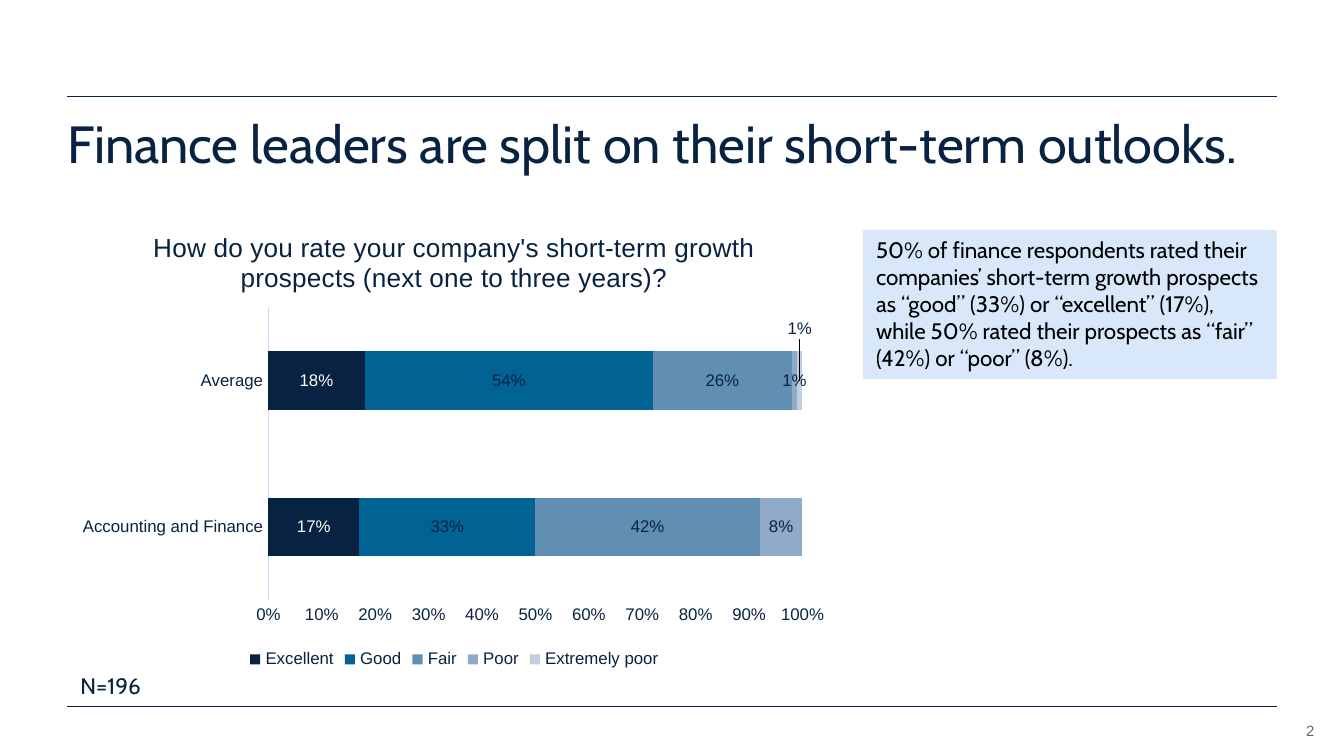
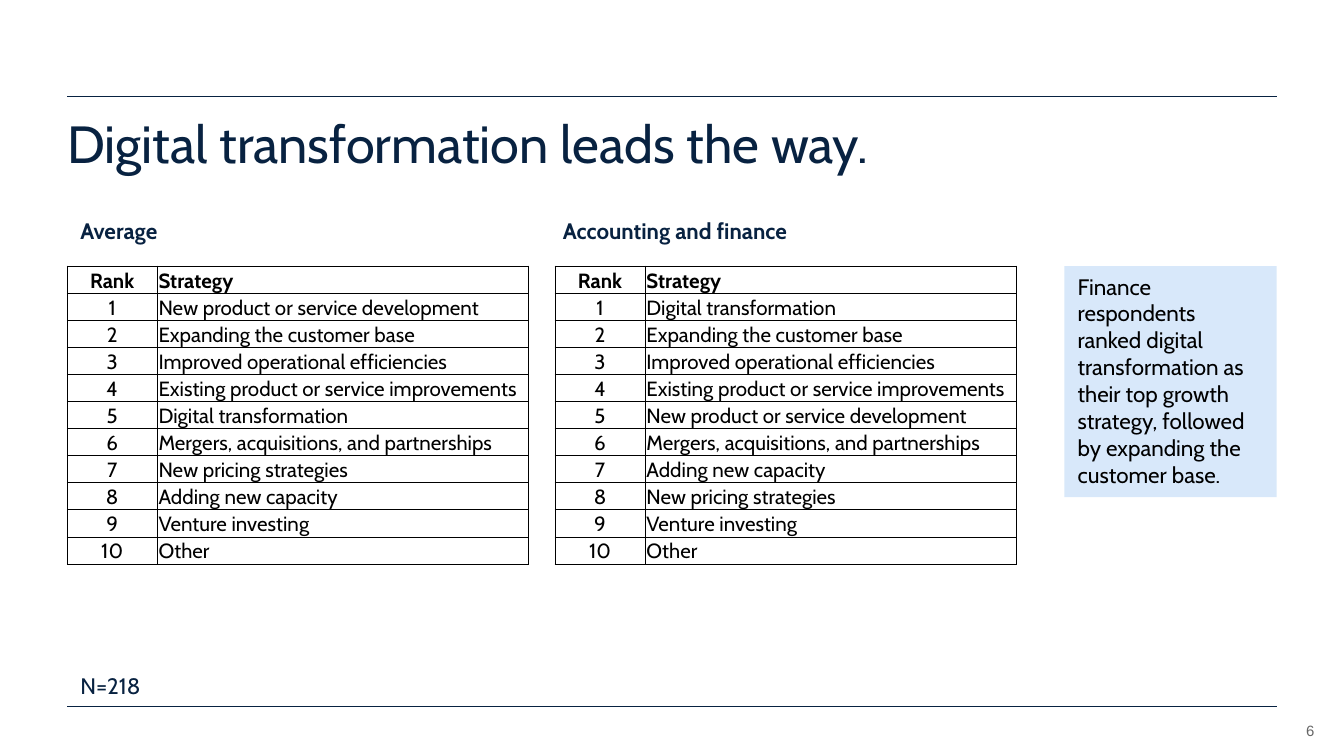
"""Build two slides on the growth outlook and strategies of finance leaders."""

import dataclasses
import typing

import pptx
import pptx.chart.chart
import pptx.chart.data
import pptx.dml.color
import pptx.enum.chart
import pptx.enum.shapes
import pptx.enum.text
import pptx.oxml
import pptx.oxml.ns
import pptx.presentation
import pptx.slide
import pptx.text.text
import pptx.util
from pptx.util import Inches

COLORS = {
    "navy": "082241", "black": "000000", "white": "FFFFFF", "grey": "666666",
    "callout": "D8E8FA", "axis": "C5DCF8", "good": "006393",
    "fair": "618EB3", "poor": "8FABC8", "extremely poor": "C1CEDF",
}
BODY_FONT = "Cabin"
CHART_FONT = "Arial"
LEFT, RIGHT = 0.5, 9.5
RULE_TOPS = (0.72, 5.26)
TABLE_TOP = 1.98
ALIGN = pptx.enum.text.PP_ALIGN
ANCHOR = pptx.enum.text.MSO_ANCHOR


@dataclasses.dataclass(frozen=True)
class Area:
    left: float
    top: float
    width: float
    height: float

    def lengths(self) -> list[pptx.util.Length]:
        return [Inches(value) for value in dataclasses.astuple(self)]


@dataclasses.dataclass(frozen=True)
class Rating:
    name: str
    values: tuple[typing.Optional[float], ...]
    color: str
    label_color: str = "navy"


@dataclasses.dataclass(frozen=True)
class Ranking:
    heading: str
    heading_area: Area
    table_left: float
    strategies: tuple[str, ...]


RATINGS = (
    Rating("Excellent", (0.17, 0.18), "navy", "white"),
    Rating("Good", (0.33, 0.54), "good"),
    Rating("Fair", (0.42, 0.26), "fair"),
    Rating("Poor", (0.08, 0.01), "poor"),
    Rating("Extremely poor", (None, 0.01), "extremely poor"),
)

RANKINGS = (
    Ranking("Average", Area(LEFT, 1.57, 1.82, 0.3), LEFT, (
        "New product or service development",
        "Expanding the customer base",
        "Improved operational efficiencies",
        "Existing product or service improvements",
        "Digital transformation",
        "Mergers, acquisitions, and partnerships",
        "New pricing strategies",
        "Adding new capacity",
        "Venture investing",
        "Other",
    )),
    Ranking("Accounting and finance", Area(4.09, 1.57, 3.12, 0.3), 4.13, (
        "Digital transformation",
        "Expanding the customer base",
        "Improved operational efficiencies",
        "Existing product or service improvements",
        "New product or service development",
        "Mergers, acquisitions, and partnerships",
        "Adding new capacity",
        "New pricing strategies",
        "Venture investing",
        "Other",
    )),
)


def rgb(name: str) -> pptx.dml.color.RGBColor:
    return pptx.dml.color.RGBColor.from_string(COLORS[name])


def style_font(font: pptx.text.text.Font, size: float, color: str = "navy",
               name: str = CHART_FONT, bold: bool = False) -> None:
    font.size = pptx.util.Pt(size)
    font.name = name
    font.bold = bold
    font.color.rgb = rgb(color)


def write_text(frame: pptx.text.text.TextFrame, text: str, *, size: float = 12,
               color: str = "navy", font: str = BODY_FONT, bold: bool = False,
               align: ALIGN = ALIGN.LEFT,
               line_spacing: typing.Optional[float] = None) -> None:
    para = frame.paragraphs[0]
    para.alignment = align
    if line_spacing:
        para.line_spacing = line_spacing
    span = para.add_run()
    span.text = text
    style_font(span.font, size, color, font, bold)


def add_text(page: pptx.slide.Slide, area: Area, text: str, *,
             inset: bool = True, anchor: ANCHOR = ANCHOR.TOP,
             **text_format: typing.Any) -> None:
    frame = page.shapes.add_textbox(*area.lengths()).text_frame
    frame.word_wrap = True
    frame.vertical_anchor = anchor
    if not inset:
        frame.margin_left = frame.margin_right = 0
        frame.margin_top = frame.margin_bottom = 0
    write_text(frame, text, **text_format)


def add_callout(page: pptx.slide.Slide, area: Area, text: str) -> None:
    box = page.shapes.add_shape(
        pptx.enum.shapes.MSO_SHAPE.RECTANGLE, *area.lengths())
    box.shadow.inherit = False
    box.fill.solid()
    box.fill.fore_color.rgb = rgb("callout")
    box.line.fill.background()
    box.text_frame.word_wrap = True
    box.text_frame.vertical_anchor = ANCHOR.TOP
    write_text(box.text_frame, text, color="black")


def add_rule(page: pptx.slide.Slide, top: float) -> None:
    rule = page.shapes.add_connector(
        pptx.enum.shapes.MSO_CONNECTOR.STRAIGHT,
        Inches(LEFT), Inches(top), Inches(RIGHT), Inches(top))
    rule.line.color.rgb = rgb("navy")
    rule.line.width = pptx.util.Pt(0.5)
    rule.element.spPr.append(
        pptx.oxml.parse_xml(f'<a:effectLst {pptx.oxml.ns.nsdecls("a")}/>'))


def add_page(deck: pptx.presentation.Presentation, title: str, number: int,
             sample: int) -> pptx.slide.Slide:
    page = deck.slides.add_slide(deck.slide_layouts[6])
    for top in RULE_TOPS:
        add_rule(page, top)
    add_text(page, Area(9.31, 5.32, 0.47, 0.18), str(number), inset=False,
             anchor=ANCHOR.BOTTOM, size=8, color="grey", font=CHART_FONT,
             align=ALIGN.RIGHT)
    add_text(page, Area(LEFT, 0.88, RIGHT - LEFT, 0.55), title, inset=False,
             size=28, line_spacing=0.9)
    add_text(page, Area(LEFT, 4.95, 1.04, 0.3), f"N={sample}")
    return page


def manual_layout(**settings: typing.Any) -> typing.Any:
    values = "".join(f'<c:{key} val="{value}"/>'
                     for key, value in settings.items())
    return pptx.oxml.parse_xml(
        f'<c:layout {pptx.oxml.ns.nsdecls("c")}>'
        f"<c:manualLayout>{values}</c:manualLayout></c:layout>")


def place_plot(chart: pptx.chart.chart.Chart) -> None:
    plot_area = chart.element.find(".//" + pptx.oxml.ns.qn("c:plotArea"))
    for layout in plot_area.findall(pptx.oxml.ns.qn("c:layout")):
        plot_area.remove(layout)
    plot_area.insert(0, manual_layout(
        layoutTarget="inner", xMode="edge", yMode="edge",
        x=0.26, y=0.21, w=0.69, h=0.63))


def raise_last_label(chart: pptx.chart.chart.Chart) -> None:
    label = chart.plots[0].series[-1].points[1].data_label
    label.position = pptx.enum.chart.XL_LABEL_POSITION.CENTER
    style_font(label.font, 9)
    node = chart.element.find(".//" + pptx.oxml.ns.qn("c:dLbl"))
    node.insert(1, manual_layout(x=0, y=-0.11))
    node.insert(2, pptx.oxml.parse_xml(
        f'<c:numFmt {pptx.oxml.ns.nsdecls("c")} formatCode="0%" '
        'sourceLinked="0"/>'))
    node.getparent().append(pptx.oxml.parse_xml(
        f'<c:extLst {pptx.oxml.ns.nsdecls("c")}>'
        '<c:ext uri="{CE6537A1-D6FC-4f65-9D91-7224C49458BB}" xmlns:c15='
        '"http://schemas.microsoft.com/office/drawing/2012/chart">'
        '<c15:showLeaderLines val="0"/></c:ext></c:extLst>'))


def add_outlook_chart(page: pptx.slide.Slide, area: Area) -> None:
    data = pptx.chart.data.CategoryChartData(number_format="0%")
    data.categories = ["Accounting and Finance", "Average"]
    for rating in RATINGS:
        data.add_series(rating.name, rating.values)
    chart = page.shapes.add_chart(
        pptx.enum.chart.XL_CHART_TYPE.BAR_STACKED_100,
        *area.lengths(), data).chart
    style_font(chart.font, 10)
    chart.has_title = True
    write_text(chart.chart_title.text_frame,
               "How do you rate your company's short-term growth prospects "
               "(next one to three years)?",
               size=14, font=CHART_FONT, align=ALIGN.CENTER)
    chart.has_legend = True
    chart.legend.position = pptx.enum.chart.XL_LEGEND_POSITION.BOTTOM
    chart.legend.include_in_layout = False
    style_font(chart.legend.font, 9)
    for axis in (chart.category_axis, chart.value_axis):
        axis.has_major_gridlines = False
        axis.major_tick_mark = pptx.enum.chart.XL_TICK_MARK.NONE
        axis.minor_tick_mark = pptx.enum.chart.XL_TICK_MARK.NONE
        style_font(axis.tick_labels.font, 9)
    chart.category_axis.format.line.color.rgb = rgb("axis")
    chart.category_axis.format.line.width = pptx.util.Pt(0.75)
    chart.value_axis.format.line.fill.background()
    chart.value_axis.tick_labels.number_format = "0%"
    chart.value_axis.tick_labels.number_format_is_linked = False
    plot = chart.plots[0]
    plot.gap_width = 150
    plot.overlap = 100
    plot.vary_by_categories = False
    for series, rating in zip(plot.series, RATINGS):
        series.format.fill.solid()
        series.format.fill.fore_color.rgb = rgb(rating.color)
        labels = series.data_labels
        labels.show_value = True
        labels.number_format = "0%"
        labels.number_format_is_linked = False
        labels.position = pptx.enum.chart.XL_LABEL_POSITION.CENTER
        style_font(labels.font, 9, rating.label_color)
    raise_last_label(chart)
    place_plot(chart)


def add_ranking(page: pptx.slide.Slide, ranking: Ranking) -> None:
    add_text(page, ranking.heading_area, ranking.heading, bold=True)
    rows = [("Rank", "Strategy")]
    rows += [(str(rank), strategy)
             for rank, strategy in enumerate(ranking.strategies, 1)]
    area = Area(ranking.table_left, TABLE_TOP, 3.43, 2.22)
    holder = page.shapes.add_table(len(rows), 2, *area.lengths())
    table = holder.table
    table.first_row = table.horz_banding = False
    for column, width in zip(table.columns, (0.67, 2.76)):
        column.width = Inches(width)
    for row_index, row in enumerate(rows):
        for column_index, text in enumerate(row):
            cell = table.cell(row_index, column_index)
            cell.fill.background()
            cell.vertical_anchor = ANCHOR.BOTTOM
            cell.margin_left = cell.margin_right = Inches(0.01)
            cell.margin_top, cell.margin_bottom = Inches(0.01), 0
            write_text(cell.text_frame, text, size=11, color="black",
                       bold=row_index == 0,
                       align=ALIGN.LEFT if column_index else ALIGN.CENTER)
    for properties in holder.element.iter(pptx.oxml.ns.qn("a:tcPr")):
        for index, side in enumerate("LRTB"):
            properties.insert(index, pptx.oxml.parse_xml(
                f'<a:ln{side} {pptx.oxml.ns.nsdecls("a")} '
                f'w="{pptx.util.Pt(0.5)}"><a:solidFill><a:srgbClr '
                f'val="{COLORS["black"]}"/></a:solidFill></a:ln{side}>'))


def main() -> None:
    deck = pptx.Presentation()
    deck.slide_width, deck.slide_height = Inches(10), Inches(10 * 9 / 16)

    outlook = add_page(
        deck, "Finance leaders are split on their short-term outlooks.", 2, 196)
    add_callout(outlook, Area(6.42, 1.71, 3.08, 1.11),
                "50% of finance respondents rated their companies’ short-term "
                "growth prospects as “good” (33%) or “excellent” (17%), while "
                "50% rated their prospects as “fair” (42%) or “poor” (8%).")
    add_outlook_chart(outlook, Area(LEFT, 1.56, 5.76, 3.46))

    strategy = add_page(deck, "Digital transformation leads the way.", 6, 218)
    add_callout(strategy, Area(7.92, TABLE_TOP, 1.58, 1.72),
                "Finance respondents ranked digital transformation as their "
                "top growth strategy, followed by expanding the customer base.")
    for ranking in RANKINGS:
        add_ranking(strategy, ranking)

    deck.save("out.pptx")


if __name__ == "__main__":
    main()
